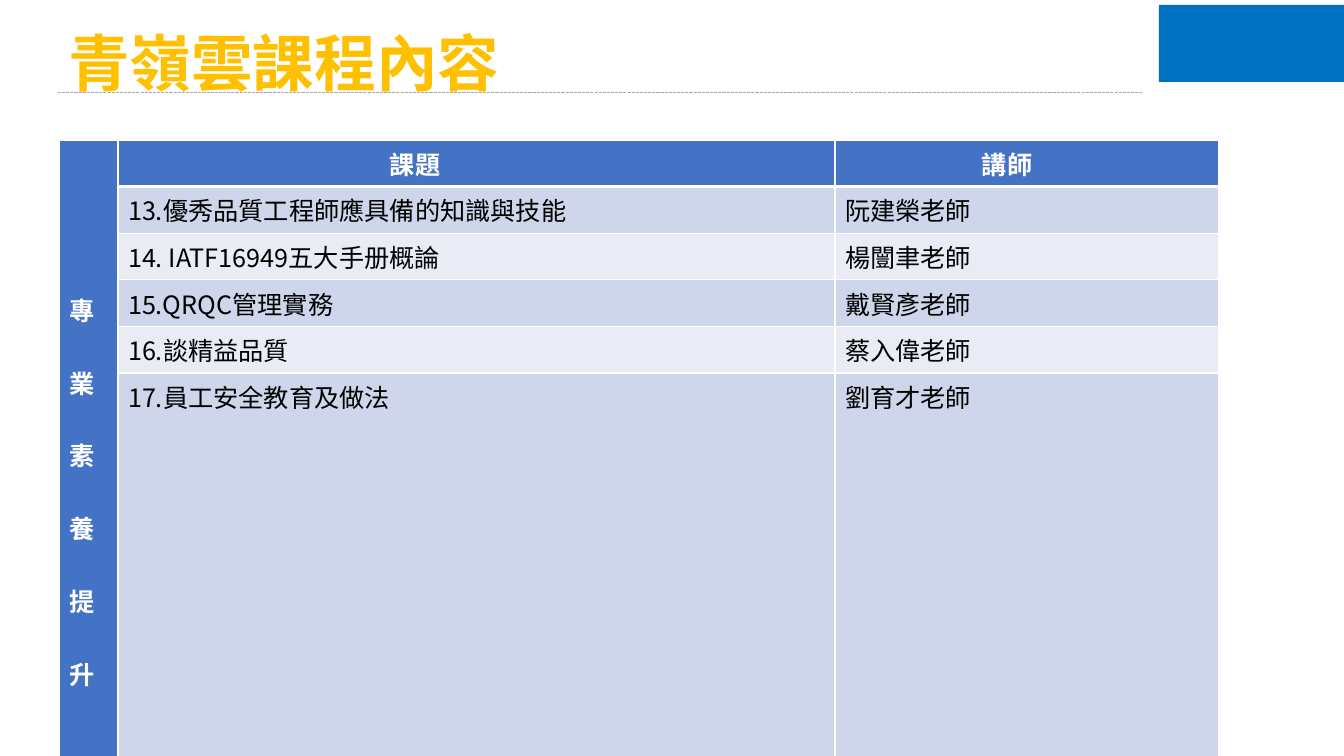
from dataclasses import dataclass

from lxml import etree
from pptx import Presentation
from pptx import util as u
from pptx.dml.color import RGBColor
from pptx.enum import dml, shapes, text
from pptx.oxml import ns

FONT = "Noto Sans CJK SC"
WHITE = RGBColor(0xFF, 0xFF, 0xFF)
BLACK = RGBColor(0x00, 0x00, 0x00)
GOLD = RGBColor(0xFF, 0xC0, 0x00)
BLUE = RGBColor(0x00, 0x70, 0xC0)
GREY = RGBColor(0xA6, 0xA6, 0xA6)
HEADER_BLUE = RGBColor(0x44, 0x72, 0xC4)
BANDS = (RGBColor(0xCF, 0xD5, 0xEA), RGBColor(0xE9, 0xEB, 0xF5))

COLUMN_WIDTHS = (59, 717, 384)
ROW_HEIGHT = 31
LAST_ROW_HEIGHT = 301
TABLE_HEIGHT = 524
CATEGORY = "專業素養提升"


@dataclass
class Heading:
    label: str
    indent: int


@dataclass
class Course:
    topic: str
    teacher: str


HEADINGS = (Heading("課題", 272), Heading("講師", 147))
COURSES = (
    Course("13.優秀品質工程師應具備的知識與技能", "阮建榮老師"),
    Course("14. IATF16949五大手册概論", "楊闓聿老師"),
    Course("15.QRQC管理實務", "戴賢彥老師"),
    Course("16.談精益品質", "蔡入偉老師"),
    Course("17.員工安全教育及做法", "劉育才老師"),
)


def px(length: int) -> u.Emu:
    return u.Emu(round(length * 914400 / 100.8))


def format_text(frame, size: int, color: RGBColor, bold: bool) -> None:
    for para in frame.paragraphs:
        para.alignment = text.PP_ALIGN.LEFT
        for span in para.runs:
            font = span.font
            font.name, font.size, font.bold = FONT, u.Pt(size), bold
            font.color.rgb = color
            east_asian = etree.SubElement(font._element, ns.qn("a:ea"))
            east_asian.set("typeface", FONT)


def add_borders(cell, bottom: int) -> None:
    properties = cell._tc.get_or_add_tcPr()
    for side, width in (("L", 1), ("R", 1), ("T", 1), ("B", bottom)):
        line = etree.SubElement(properties, ns.qn(f"a:ln{side}"), w=str(u.Pt(width)))
        fill = etree.SubElement(line, ns.qn("a:solidFill"))
        etree.SubElement(fill, ns.qn("a:srgbClr"), val=str(WHITE))


def fill_cell(cell, words: str, fill: RGBColor, color: RGBColor, bold: bool) -> None:
    cell.text_frame.text = words
    format_text(cell.text_frame, 18, color, bold)
    cell.fill.solid()
    cell.fill.fore_color.rgb = fill


def add_title(page) -> None:
    title = page.shapes.title
    title.left, title.top, title.width, title.height = px(58), px(23), px(1038), px(87)
    frame = title.text_frame
    frame.text = "青嶺雲課程內容"
    frame.auto_size = text.MSO_AUTO_SIZE.NONE
    frame.vertical_anchor = text.MSO_ANCHOR.MIDDLE
    frame.paragraphs[0].line_spacing = 0.9
    format_text(frame, 44, GOLD, True)


def add_course_table(page) -> None:
    frame = page.shapes.add_table(
        len(COURSES) + 1, len(COLUMN_WIDTHS),
        px(59), px(140), px(sum(COLUMN_WIDTHS)), px(TABLE_HEIGHT))
    table = frame.table
    for column, width in zip(table.columns, COLUMN_WIDTHS):
        column.width = px(width)
    for number, row in enumerate(table.rows):
        row.height = px(LAST_ROW_HEIGHT if number == len(COURSES) else ROW_HEIGHT)
        for cell in row.cells:
            add_borders(cell, 3 if number == 0 else 1)
    frame.height = px(TABLE_HEIGHT)

    # Category column, one character per paragraph
    category = table.cell(0, 0)
    category.merge(table.cell(len(COURSES), 0))
    fill_cell(category, "\n".join(CATEGORY), HEADER_BLUE, WHITE, True)
    category.margin_top = px(151)
    for para in category.text_frame.paragraphs[1:]:
        para.space_before = u.Pt(26)

    # Header row
    for column, heading in enumerate(HEADINGS, start=1):
        cell = table.cell(0, column)
        fill_cell(cell, heading.label, HEADER_BLUE, WHITE, True)
        cell.margin_left = px(heading.indent)

    # Course rows
    for number, course in enumerate(COURSES):
        for column, words in enumerate((course.topic, course.teacher), start=1):
            fill_cell(table.cell(number + 1, column), words,
                      BANDS[number % 2], BLACK, False)


def add_decoration(page) -> None:
    # Corner block
    block = page.shapes.add_shape(
        shapes.MSO_SHAPE.RECTANGLE, px(1159), px(5), px(185), px(77))
    block.shadow.inherit = False
    block.fill.solid()
    block.fill.fore_color.rgb = BLUE
    block.line.fill.background()

    # Dashed rule under the title
    rule = page.shapes.add_connector(
        shapes.MSO_CONNECTOR.STRAIGHT, px(58), px(93), px(1143), px(93))
    rule.line.color.rgb = GREY
    rule.line.width = u.Pt(0.75)
    rule.line.dash_style = dml.MSO_LINE.SQUARE_DOT
    etree.SubElement(rule._element.spPr, ns.qn("a:effectLst"))


def main() -> None:
    deck = Presentation()
    deck.slide_width, deck.slide_height = px(1344), px(756)
    page = deck.slides.add_slide(deck.slide_layouts[5])
    add_course_table(page)
    add_decoration(page)
    add_title(page)
    deck.save("out.pptx")


if __name__ == "__main__":
    main()
